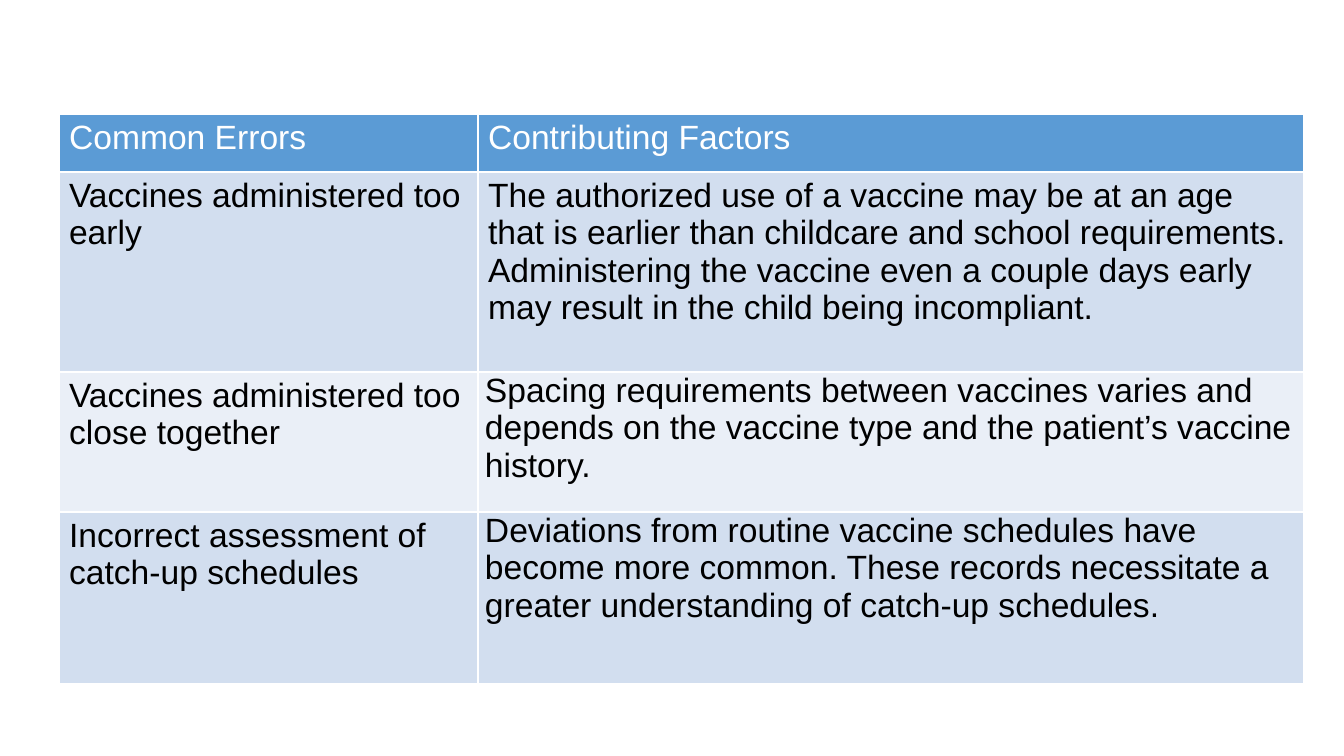
"""Build a slide with a table of common vaccination errors and their factors."""
from lxml.etree import SubElement
from pptx import Presentation
from pptx.dml.color import RGBColor
from pptx.oxml.ns import qn
from pptx.util import Pt

ROWS = [
    ("Common Errors", "Contributing Factors"),
    ("Vaccines administered too early",
     "The authorized use of a vaccine may be at an age that is earlier than "
     "childcare and school requirements. Administering the vaccine even a "
     "couple days early may result in the child being incompliant."),
    ("Vaccines administered too close together",
     "Spacing requirements between vaccines varies and depends on the vaccine "
     "type and the patient’s vaccine history."),
    ("Incorrect assessment of catch-up schedules",
     "Deviations from routine vaccine schedules have become more common. "
     "These records necessitate a greater understanding of catch-up schedules."),
]
COLUMN_WIDTHS = [419, 826]
ROW_HEIGHTS = [58, 200, 140, 172]
TABLE_LEFT, TABLE_TOP = 59, 114
TIGHT_CELLS = {(2, 1), (3, 1)}

WHITE = RGBColor(0xFF, 0xFF, 0xFF)
BLACK = RGBColor(0x00, 0x00, 0x00)
HEADER_BLUE = RGBColor(0x5B, 0x9B, 0xD5)
BAND_DARK = RGBColor(0xD2, 0xDE, 0xEF)
BAND_LIGHT = RGBColor(0xEA, 0xEF, 0xF7)
EMU_PER_PX = 914400 / 100.8


def px(length):
    return round(length * EMU_PER_PX)


def add_borders(cell):
    properties = cell._tc.get_or_add_tcPr()
    for side in ("lnL", "lnR", "lnT", "lnB"):
        line = SubElement(properties, qn(f"a:{side}"), w=str(Pt(1)))
        fill = SubElement(line, qn("a:solidFill"))
        SubElement(fill, qn("a:srgbClr"), val=str(WHITE))


def fill_cell(cell, text, row, column):
    if row == 0:
        background, ink = HEADER_BLUE, WHITE
    else:
        background, ink = (BAND_DARK if row % 2 else BAND_LIGHT), BLACK
    add_borders(cell)
    cell.fill.solid()
    cell.fill.fore_color.rgb = background
    if (row, column) in TIGHT_CELLS:
        cell.margin_left = cell.margin_right = px(7)
        cell.margin_top = cell.margin_bottom = 0
    cell.text_frame.text = text
    font = cell.text_frame.paragraphs[0].runs[0].font
    font.name, font.size, font.bold = "Arial", Pt(24), False
    font.color.rgb = ink


def main():
    deck = Presentation()
    deck.slide_width, deck.slide_height = px(1344), px(756)
    page = deck.slides.add_slide(deck.slide_layouts[6])
    table = page.shapes.add_table(
        len(ROW_HEIGHTS), len(COLUMN_WIDTHS), px(TABLE_LEFT), px(TABLE_TOP),
        px(sum(COLUMN_WIDTHS)), px(sum(ROW_HEIGHTS))).table
    for column, width in zip(table.columns, COLUMN_WIDTHS):
        column.width = px(width)
    for row, height in zip(table.rows, ROW_HEIGHTS):
        row.height = px(height)
    for row, texts in enumerate(ROWS):
        for column, text in enumerate(texts):
            fill_cell(table.cell(row, column), text, row, column)
    deck.save("out.pptx")


if __name__ == "__main__":
    main()
